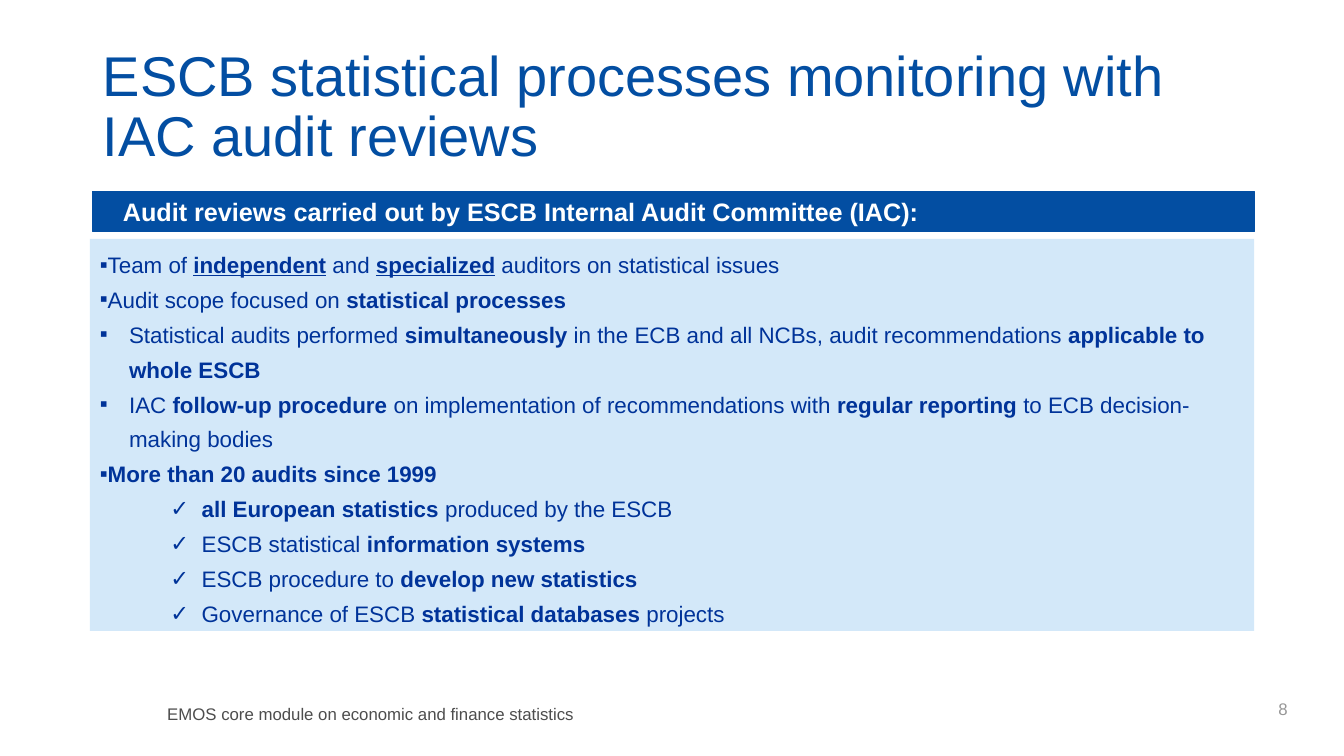
import pptx
import pptx.util
import pptx.dml.color
import pptx.enum.shapes
import pptx.enum.text
import lxml.etree

Inches = pptx.util.Inches
Pt = pptx.util.Pt
ALIGN = pptx.enum.text.PP_ALIGN
ANCHOR = pptx.enum.text.MSO_ANCHOR
FIT = pptx.enum.text.MSO_AUTO_SIZE
NS = "http://schemas.openxmlformats.org/drawingml/2006/main"

HUES = {
    "blue": "034EA2",
    "navy": "003399",
    "pale": "D3E8F9",
    "white": "FFFFFF",
    "dark": "4D4D4D",
    "gray": "979797",
}


def hue(name):
    return pptx.dml.color.RGBColor.from_string(HUES[name])


def style(para, size, color, align=ALIGN.LEFT):
    para.alignment = align
    para.font.name = "Arial"
    para.font.size = Pt(size)
    para.font.color.rgb = hue(color)


deck = pptx.Presentation()
deck.slide_width = Inches(13.33)
deck.slide_height = Inches(7.5)
slide = deck.slides.add_slide(deck.slide_layouts[1])

# Title
title = slide.shapes.title
title.left, title.top = Inches(0.92), Inches(0.4)
title.width, title.height = Inches(11.52), Inches(1.3)
frame = title.text_frame
frame.text = "ESCB statistical processes monitoring with IAC audit reviews"
frame.auto_size = FIT.NONE
frame.vertical_anchor = ANCHOR.MIDDLE
frame.margin_bottom = 0
frame.paragraphs[0].line_spacing = 0.9
style(frame.paragraphs[0], 40, "blue")

# Heading bar
bar = slide.shapes.add_shape(
    pptx.enum.shapes.MSO_SHAPE.RECTANGLE,
    Inches(0.92), Inches(1.9), Inches(11.52), Inches(0.4))
bar.shadow.inherit = False
bar.fill.solid()
bar.fill.fore_color.rgb = hue("blue")
bar.line.color.rgb = hue("blue")
bar.line.width = Pt(0.75)
frame = bar.text_frame
frame.text = "Audit reviews carried out by ESCB Internal Audit Committee (IAC):"
frame.word_wrap = True
frame.vertical_anchor = ANCHOR.MIDDLE
para = frame.paragraphs[0]
para._p.get_or_add_pPr().set("marL", str(Inches(0.2)))
style(para, 18, "white")
para.font.bold = True

# List: bullet, level, margin, indent, text with *bold* parts
FLUSH = ("▪", 0, 0, -0.3)
HANG = ("▪", 0, 0.29, -0.29)
CHECK = ("✓", 2, 1.01, -0.31)
ITEMS = [
    (FLUSH, "Team of *independent* and *specialized* auditors on statistical issues"),
    (FLUSH, "Audit scope focused on *statistical processes*"),
    (HANG, "Statistical audits performed *simultaneously* in the ECB and all NCBs, "
           "audit recommendations *applicable to whole ESCB*"),
    (HANG, "IAC *follow-up procedure *on implementation of recommendations with "
           "*regular reporting* to ECB decision-making bodies"),
    (FLUSH, "*More than 20 audits since 1999*"),
    (CHECK, "*all European statistics *produced by the ESCB"),
    (CHECK, "ESCB statistical *information systems*"),
    (CHECK, "ESCB procedure to *develop new statistics*"),
    (CHECK, "Governance of ESCB *statistical databases *projects"),
]
LINED = ("independent", "specialized")

body = slide.placeholders[1]
body.left, body.top = Inches(0.89), Inches(2.37)
body.width, body.height = Inches(11.55), Inches(3.89)
body.fill.solid()
body.fill.fore_color.rgb = hue("pale")
frame = body.text_frame
frame.auto_size = FIT.NONE
frame.vertical_anchor = ANCHOR.MIDDLE
for i, ((mark, level, margin, indent), text) in enumerate(ITEMS):
    para = frame.add_paragraph() if i else frame.paragraphs[0]
    para.level = level
    props = para._p.get_or_add_pPr()
    props.set("marL", str(Inches(margin)))
    props.set("indent", str(Inches(indent)))
    tint = lxml.etree.SubElement(props, f"{{{NS}}}buClr")
    lxml.etree.SubElement(tint, f"{{{NS}}}srgbClr", val=HUES["navy"])
    lxml.etree.SubElement(props, f"{{{NS}}}buFont", typeface="Arial")
    lxml.etree.SubElement(props, f"{{{NS}}}buChar", char=mark)
    para.line_spacing = 1.3
    para.space_before = Pt(0)
    style(para, 16, "navy")
    for j, part in enumerate(text.split("*")):
        if part:
            run = para.add_run()
            run.text = part
            if j % 2:
                run.font.bold = True
            if part in LINED:
                run.font.underline = True

# Footer and page number
NOTES = [
    ("EMOS core module on economic and finance statistics",
     1.56, 6.93, 6.08, 0.3, "dark", ALIGN.LEFT, ANCHOR.TOP),
    ("8", 9.87, 6.83, 3, 0.4, "gray", ALIGN.RIGHT, ANCHOR.MIDDLE),
]
for text, x, y, w, h, color, align, anchor in NOTES:
    box = slide.shapes.add_textbox(Inches(x), Inches(y), Inches(w), Inches(h))
    frame = box.text_frame
    frame.text = text
    frame.word_wrap = True
    frame.vertical_anchor = anchor
    style(frame.paragraphs[0], 12, color, align)

deck.save("out.pptx")
